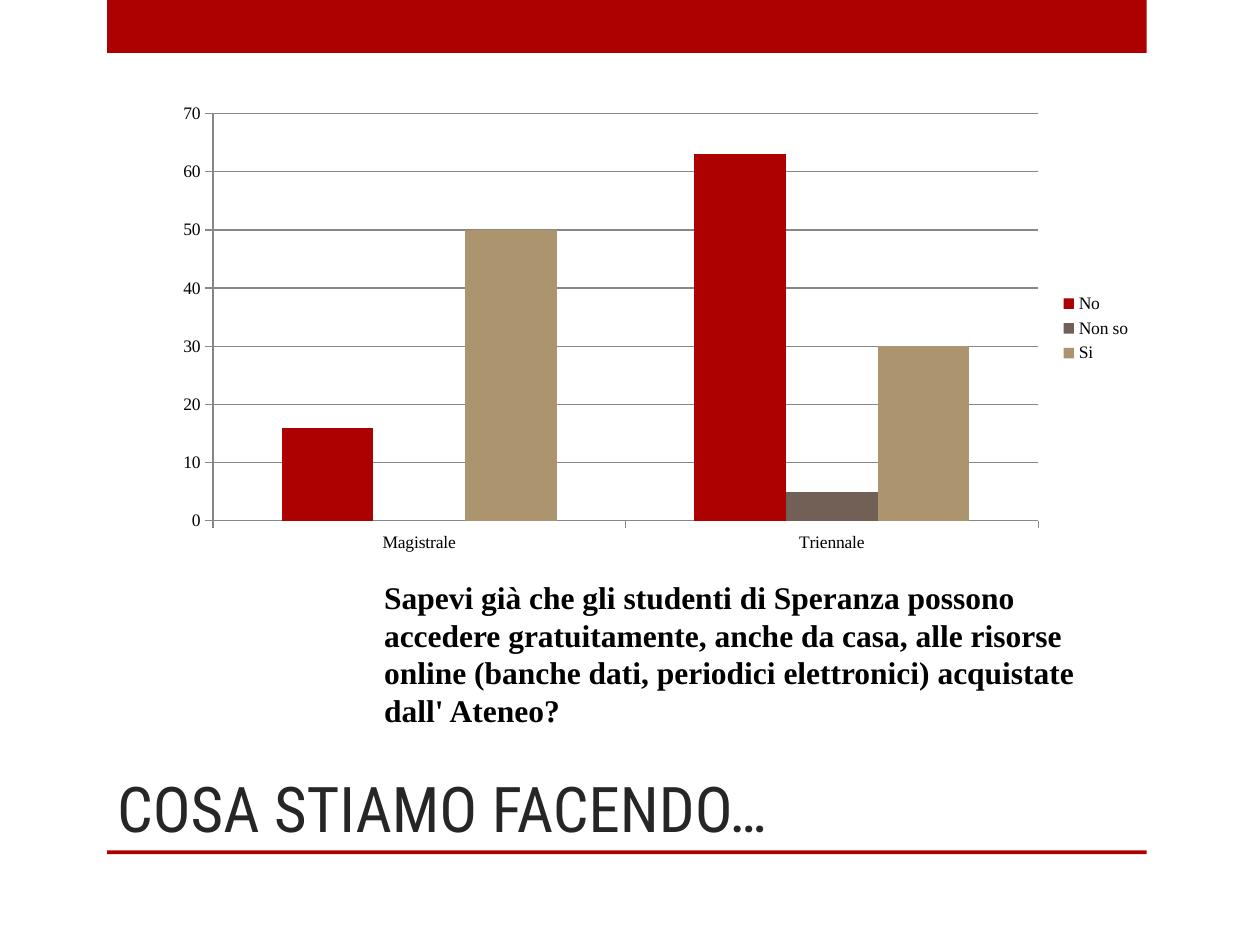
from dataclasses import dataclass
from pptx import Presentation
from pptx.chart.data import CategoryChartData
from pptx.dml.color import RGBColor
from pptx.enum.chart import XL_CHART_TYPE as ChartType, XL_LEGEND_POSITION as LegendPosition, XL_TICK_MARK as TickMark
from pptx.enum.shapes import MSO_SHAPE as ShapeKind
from pptx.enum.text import MSO_ANCHOR as Anchor, MSO_AUTO_SIZE as AutoSize, PP_ALIGN as Align
from pptx.util import Inches, Pt


@dataclass(frozen=True)
class Theme:
    """Colours, fonts and type sizes of the slide."""
    red: str = "AD0101"
    brown: str = "726056"
    tan: str = "AC956E"
    grid: str = "878787"
    ink: str = "000000"
    heading: str = "262626"
    heading_font: str = "Roboto Condensed"
    body_font: str = "Times New Roman"
    title_size: int = 36
    question_size: int = 18
    chart_size: int = 10


THEME = Theme()
WIDTH, HEIGHT = Inches(10), Inches(7.5)


def box(left, top, width, height):
    """Turn shares of the slide's size into left, top, width and height."""
    return int(left * WIDTH), int(top * HEIGHT), int(width * WIDTH), int(height * HEIGHT)


def style_font(font, name, size, color, bold=False):
    """Apply name, size, colour and weight to a font."""
    font.name, font.size, font.bold = name, Pt(size), bold
    font.color.rgb = RGBColor.from_string(color)


def add_bands(slide, area, top_share, rule_share):
    """Draw the top band and the bottom rule of the given area."""
    left, top, width, height = area
    band, rule = int(height * top_share), int(height * rule_share)
    for band_top, band_height in ((top, band), (top + height - rule, rule)):
        shape = slide.shapes.add_shape(ShapeKind.RECTANGLE, left, band_top, width, band_height)
        shape.shadow.inherit = False
        shape.fill.solid()
        shape.fill.fore_color.rgb = RGBColor.from_string(THEME.red)
        shape.line.fill.background()


def place_title(slide, area, text):
    """Move and format the title placeholder."""
    title = slide.shapes.title
    title.left, title.top, title.width, title.height = area
    frame = title.text_frame
    frame.text = text
    frame.auto_size, frame.vertical_anchor = AutoSize.NONE, Anchor.BOTTOM
    paragraph = frame.paragraphs[0]
    paragraph.alignment = Align.LEFT
    style_font(paragraph.font, THEME.heading_font, THEME.title_size, THEME.heading)


def add_question(slide, area, text):
    """Write the survey question in a wrapping text box."""
    frame = slide.shapes.add_textbox(*area).text_frame
    frame.word_wrap = True
    frame.auto_size = AutoSize.SHAPE_TO_FIT_TEXT
    paragraph = frame.paragraphs[0]
    paragraph.text = text
    style_font(paragraph.font, THEME.body_font, THEME.question_size, THEME.ink, True)


def style_line(line):
    """Give an axis or grid line its grey stroke."""
    line.color.rgb = RGBColor.from_string(THEME.grid)
    line.width = Pt(0.75)


def add_answers_chart(slide, area, categories, answers):
    """Chart the answers as clustered columns, one colour per answer."""
    data = CategoryChartData()
    data.categories = categories
    for name, values, color in answers:
        data.add_series(name, values)
    chart = slide.shapes.add_chart(ChartType.COLUMN_CLUSTERED, *area, data).chart
    style_font(chart.font, THEME.body_font, THEME.chart_size, THEME.ink)
    chart.has_title = False
    chart.has_legend = True
    chart.legend.position = LegendPosition.RIGHT
    chart.legend.include_in_layout = False
    plot = chart.plots[0]
    plot.gap_width, plot.overlap, plot.vary_by_categories = 150, 0, False
    for series, (name, values, color) in zip(plot.series, answers):
        series.format.fill.solid()
        series.format.fill.fore_color.rgb = RGBColor.from_string(color)
        series.invert_if_negative = False
    for axis in (chart.category_axis, chart.value_axis):
        axis.major_tick_mark, axis.minor_tick_mark = TickMark.OUTSIDE, TickMark.NONE
        style_line(axis.format.line)
    value_axis = chart.value_axis
    value_axis.minimum_scale, value_axis.maximum_scale, value_axis.major_unit = 0, 70, 10
    value_axis.has_major_gridlines = True
    style_line(value_axis.major_gridlines.format.line)


def main():
    """Build and save the survey slide."""
    presentation = Presentation()
    presentation.slide_width, presentation.slide_height = WIDTH, HEIGHT
    slide = presentation.slides.add_slide(presentation.slide_layouts[5])
    add_bands(slide, box(0.085, 0, 0.825, 0.904), 0.062, 0.0045)
    place_title(slide, box(0.083, 0.668, 0.742, 0.233), "COSA STIAMO FACENDO…")
    add_question(slide, box(0.295, 0.605, 0.614, 0.175),
                 "Sapevi già che gli studenti di Speranza possono accedere gratuitamente, "
                 "anche da casa, alle risorse online (banche dati, periodici elettronici) "
                 "acquistate dall' Ateneo?")
    answers = (("No", (16, 63), THEME.red),
               ("Non so", (None, 5), THEME.brown),
               ("Si", (50, 30), THEME.tan))
    add_answers_chart(slide, box(0.13, 0.1, 0.778, 0.495), ("Magistrale", "Triennale"), answers)
    presentation.save("out.pptx")


if __name__ == "__main__":
    main()
